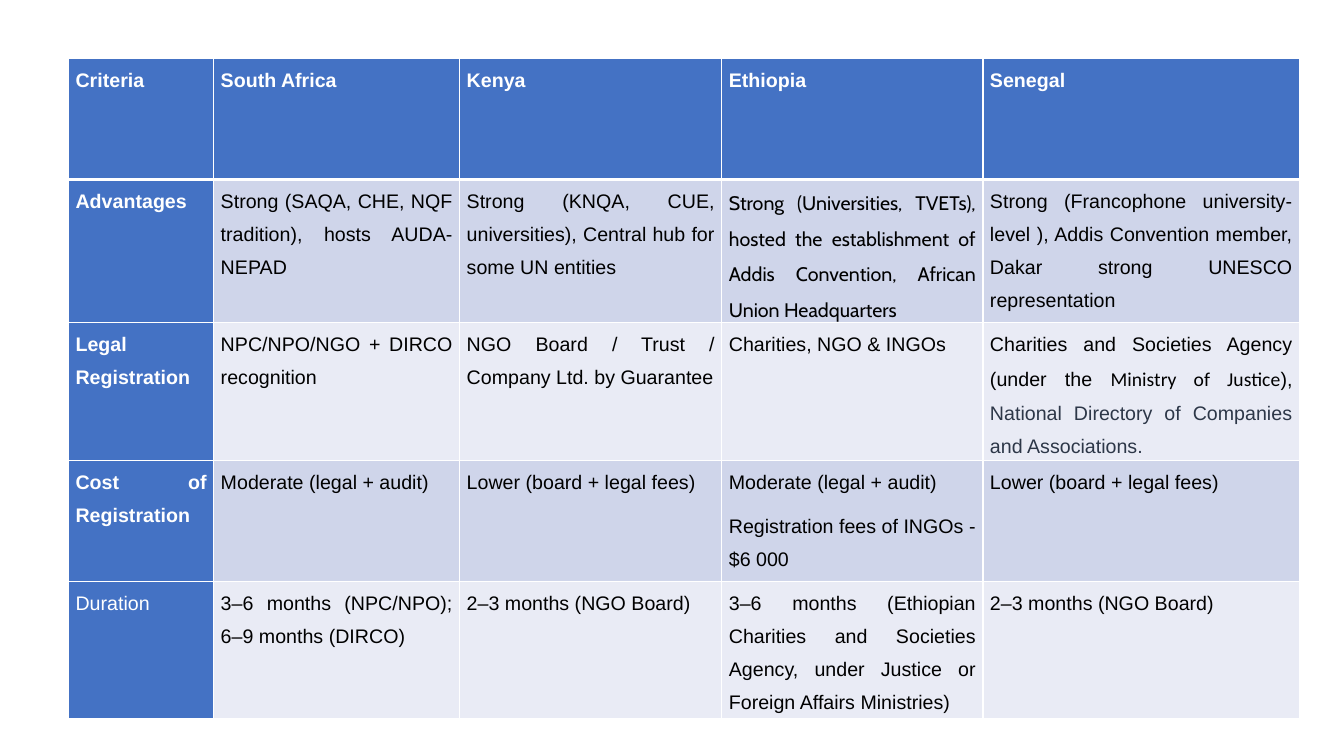
from lxml.etree import SubElement
from pptx import Presentation
from pptx.dml.color import RGBColor
from pptx.enum.text import PP_ALIGN
from pptx.oxml.ns import qn
from pptx.util import Inches, Pt

WIDTHS = [1.44, 2.44, 2.6, 2.59, 3.14]
HEIGHTS = [1.2, 1.37, 1.37, 1.2, 1.36]
BLUE, WHITE, BLACK, SLATE = "4472C4", "FFFFFF", "000000", "2D3748"
BANDS = ["E9EBF5", "CFD5EA"]

ROWS = [
    ["Criteria", "South Africa", "Kenya", "Ethiopia", "Senegal"],
    ["Advantages",
     "Strong (SAQA, CHE, NQF tradition), hosts AUDA-NEPAD ",
     "Strong (KNQA, CUE, universities), Central hub for some UN entities ",
     [[("Strong (Universities, TVETs), hosted the establishment of "
        "Addis Convention, African Union Headquarters ", "Cabin", BLACK)]],
     "Strong (Francophone university-level ), Addis Convention member, "
     "Dakar strong UNESCO representation"],
    ["Legal Registration",
     "NPC/NPO/NGO + DIRCO recognition",
     "NGO Board / Trust / Company Ltd. by Guarantee",
     "Charities, NGO & INGOs",
     [[("Charities and Societies Agency (under the ", "Arial", BLACK),
       ("Ministry of Justice", "Calibri", BLACK),
       ("), ", "Arial", BLACK),
       ("National Directory of Companies and Associations.", "Arial", SLATE)]]],
    ["Cost of Registration",
     "Moderate (legal + audit)",
     "Lower (board + legal fees)",
     [[("Moderate (legal + audit)", "Arial", BLACK)],
      [("Registration fees of INGOs - $6 000", "Arial", BLACK)]],
     "Lower (board + legal fees)"],
    ["Duration",
     "3–6 months (NPC/NPO); 6–9 months (DIRCO)",
     "2–3 months (NGO Board)",
     "3–6 months (Ethiopian Charities and Societies Agency, "
     "under Justice or Foreign Affairs Ministries)",
     "2–3 months (NGO Board)"],
]


def color(value):
    return RGBColor.from_string(value)


def border(cell, row):
    props = cell._tc.get_or_add_tcPr()
    thick = {(0, "lnB"), (1, "lnT")}
    for side in ("lnL", "lnR", "lnT", "lnB"):
        width = 3 if (row, side) in thick else 1
        line = SubElement(props, qn(f"a:{side}"), w=str(Pt(width)))
        fill = SubElement(line, qn("a:solidFill"))
        SubElement(fill, qn("a:srgbClr"), val=WHITE)


def write(cell, paras, bold):
    frame = cell.text_frame
    for index, parts in enumerate(paras):
        para = frame.add_paragraph() if index else frame.paragraphs[0]
        para.alignment = PP_ALIGN.JUSTIFY
        para.line_spacing = 1.5
        para.space_after = Pt(8)
        for text, face, tint in parts:
            run = para.add_run()
            run.text = text
            run.font.name = face
            run.font.size = Pt(14)
            run.font.bold = bold
            run.font.color.rgb = color(tint)


def fill_cell(cell, row, col, content):
    head = row == 0 or col == 0
    border(cell, row)
    cell.fill.solid()
    cell.fill.fore_color.rgb = color(BLUE if head else BANDS[row % 2])
    cell.margin_left = cell.margin_right = Inches(0.07)
    cell.margin_top = cell.margin_bottom = 0
    if isinstance(content, str):
        content = [[(content, "Arial", WHITE if head else BLACK)]]
    write(cell, content, head and row < len(ROWS) - 1)


def add_grid(slide, left, top, width, height):
    frame = slide.shapes.add_table(
        len(ROWS), len(WIDTHS),
        Inches(left), Inches(top), Inches(width), Inches(height))
    table = frame.table
    for column, size in zip(table.columns, WIDTHS):
        column.width = Inches(width * size / sum(WIDTHS))
    for line, size in zip(table.rows, HEIGHTS):
        line.height = Inches(height * size / sum(HEIGHTS))
    for row, items in enumerate(ROWS):
        for col, content in enumerate(items):
            fill_cell(table.cell(row, col), row, col, content)


def main():
    deck = Presentation()
    deck.slide_width = Inches(13.33)
    deck.slide_height = Inches(7.5)
    slide = deck.slides.add_slide(deck.slide_layouts[6])
    add_grid(slide, 0.68, 0.58, 12.21, 6.5)
    deck.save("out.pptx")


if __name__ == "__main__":
    main()
